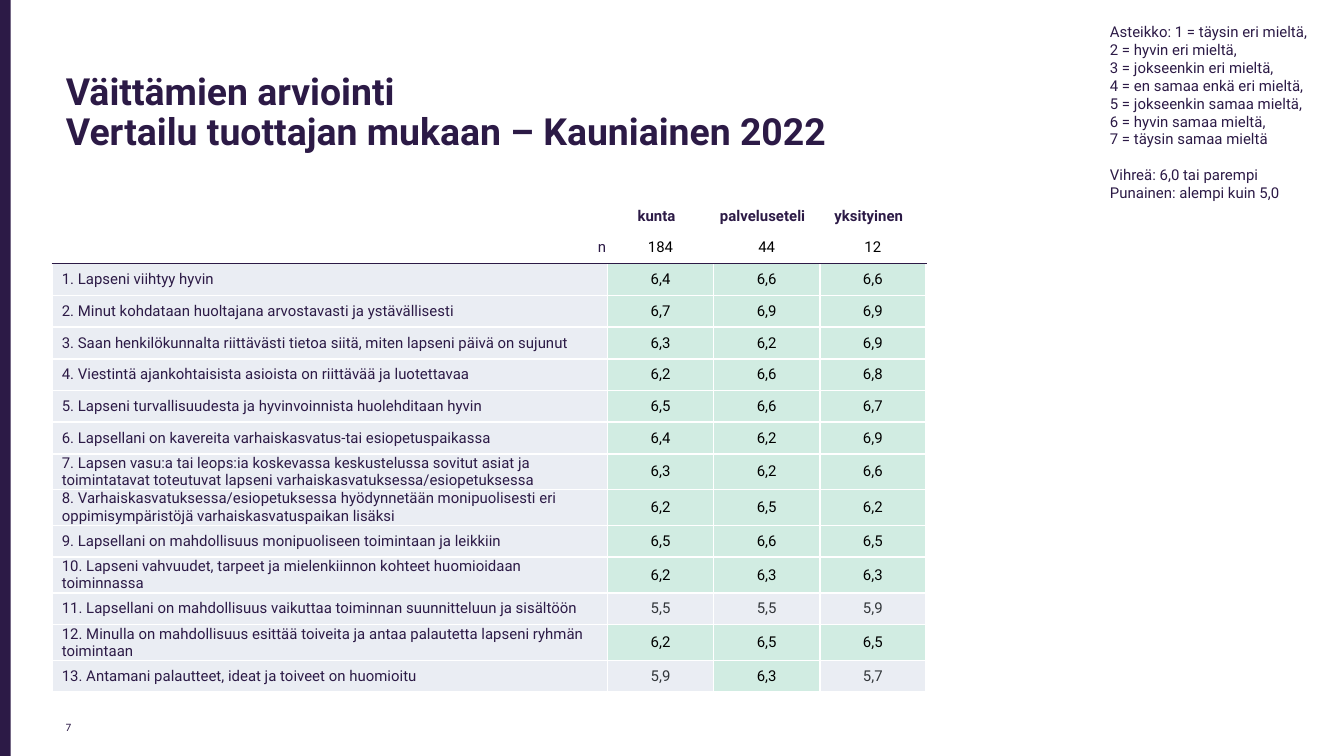
"""Build a slide comparing survey statements by provider."""
from pptx import Presentation
from pptx.dml.color import RGBColor
from pptx.enum import shapes, text
from pptx.oxml import parse_xml
from pptx.oxml import ns
from pptx.util import Inches, Pt

PLUM = RGBColor(0x2C, 0x1A, 0x46)
BLACK = RGBColor(0, 0, 0)
GREY = RGBColor(0x32, 0x36, 0x3A)
PALE = RGBColor(0xEA, 0xED, 0xF3)
GREEN = RGBColor(0xD1, 0xEC, 0xE2)
WHITE = RGBColor(255, 255, 255)
LEFT, CENTER, RIGHT = text.PP_ALIGN.LEFT, text.PP_ALIGN.CENTER, text.PP_ALIGN.RIGHT

TITLE = "Väittämien arviointi \vVertailu tuottajan mukaan – Kauniainen 2022"
SCALE = [
    "Asteikko: 1 = täysin eri mieltä,",
    "2 = hyvin eri mieltä,",
    "3 = jokseenkin eri mieltä,",
    "4 = en samaa enkä eri mieltä,",
    "5 = jokseenkin samaa mieltä,",
    "6 = hyvin samaa mieltä,",
    "7 = täysin samaa mieltä",
]
KEY = ["Vihreä: 6,0 tai parempi", "Punainen: alempi kuin 5,0"]
HEADS = ["", "kunta", "palveluseteli", "yksityinen"]
COUNTS = ["n", "184", "44", "12"]
ITEMS = [
    ("Lapseni viihtyy hyvin", "6,4 6,6 6,6"),
    ("Minut kohdataan huoltajana arvostavasti ja ystävällisesti", "6,7 6,9 6,9"),
    ("Saan henkilökunnalta riittävästi tietoa siitä, miten lapseni päivä on sujunut", "6,3 6,2 6,9"),
    ("Viestintä ajankohtaisista asioista on riittävää ja luotettavaa", "6,2 6,6 6,8"),
    ("Lapseni turvallisuudesta ja hyvinvoinnista huolehditaan hyvin", "6,5 6,6 6,7"),
    ("Lapsellani on kavereita varhaiskasvatus-tai esiopetuspaikassa", "6,4 6,2 6,9"),
    ("Lapsen vasu:a tai leops:ia koskevassa keskustelussa sovitut asiat ja toimintatavat "
     "toteutuvat lapseni varhaiskasvatuksessa/esiopetuksessa", "6,3 6,2 6,6"),
    ("Varhaiskasvatuksessa/esiopetuksessa hyödynnetään monipuolisesti eri "
     "oppimisympäristöjä varhaiskasvatuspaikan lisäksi", "6,2 6,5 6,2"),
    ("Lapsellani on mahdollisuus monipuoliseen toimintaan ja leikkiin", "6,5 6,6 6,5"),
    ("Lapseni vahvuudet, tarpeet ja mielenkiinnon kohteet huomioidaan toiminnassa", "6,2 6,3 6,3"),
    ("Lapsellani on mahdollisuus vaikuttaa toiminnan suunnitteluun ja sisältöön", "5,5 5,5 5,9"),
    ("Minulla on mahdollisuus esittää toiveita ja antaa palautetta lapseni ryhmän toimintaan",
     "6,2 6,5 6,5"),
    ("Antamani palautteet, ideat ja toiveet on huomioitu", "5,9 6,3 5,7"),
]


class Deck:
    """Hold the style and the current slide."""

    def __init__(self, wide, high):
        self.prs = Presentation()
        self.prs.slide_width, self.prs.slide_height = Inches(wide), Inches(high)
        self.slide = self.prs.slides.add_slide(self.prs.slide_layouts[5])
        self.face, self.size = "Roboto", 8

    def style(self, para, color=PLUM, size=None, bold=False, face=None):
        font = para.font
        font.name, font.size = face or self.face, Pt(size or self.size)
        font.bold, font.color.rgb = bold, color

    def title(self, words, *box):
        shape = self.slide.shapes.title
        shape.left, shape.top, shape.width, shape.height = map(Inches, box)
        frame = shape.text_frame
        frame.text, frame.vertical_anchor = words, text.MSO_ANCHOR.MIDDLE
        para = frame.paragraphs[0]
        para.alignment, para.line_spacing = LEFT, 0.9
        self.style(para, size=20, bold=True)

    def bar(self, color, *box):
        kind = shapes.MSO_SHAPE.RECTANGLE
        shape = self.slide.shapes.add_shape(kind, *map(Inches, box))
        shape.shadow.inherit = False
        shape.fill.solid()
        shape.fill.fore_color.rgb = color
        shape.line.fill.background()

    def label(self, lines, *box, anchor=text.MSO_ANCHOR.TOP, **font):
        frame = self.slide.shapes.add_textbox(*map(Inches, box)).text_frame
        frame.word_wrap, frame.vertical_anchor = True, anchor
        frame.text = "\n".join(lines)
        for para in frame.paragraphs:
            self.style(para, **font)
        return frame

    def edges(self, cell, top, bottom):
        props = cell._tc.get_or_add_tcPr()
        for spot, side in enumerate("LRTB"):
            color = {"T": top, "B": bottom}.get(side, WHITE)
            width = Pt(1) if color == WHITE else Pt(0.5)
            props.insert(spot, parse_xml(
                f'<a:ln{side} {ns.nsdecls("a")} w="{width}"><a:solidFill>'
                f'<a:srgbClr val="{color}"/></a:solidFill></a:ln{side}>'))

    def cell(self, cell, words, align, color, fill, pads, bold):
        cell.margin_left, cell.margin_right = map(Inches, pads)
        cell.margin_top = cell.margin_bottom = 0
        cell.vertical_anchor = text.MSO_ANCHOR.MIDDLE
        cell.text = words
        para = cell.text_frame.paragraphs[0]
        para.alignment = align
        self.style(para, color, bold=bold)
        if not words:
            para._p.append(parse_xml(
                f'<a:endParaRPr {ns.nsdecls("a")} sz="{self.size * 100}"/>'))
        if fill is None:
            cell.fill.background()
        else:
            cell.fill.solid()
            cell.fill.fore_color.rgb = fill

    def table(self, rows, widths, left, top, high):
        box = map(Inches, (left, top, sum(widths), high * len(rows)))
        grid = self.slide.shapes.add_table(len(rows), len(widths), *box).table
        grid.first_row = grid.horz_banding = False
        for col, width in zip(grid.columns, widths):
            col.width = Inches(width)
        for r, row in enumerate(rows):
            grid.rows[r].height = Inches(high)
            for c, words in enumerate(row):
                good = r > 1 and c and float(words.replace(",", ".")) >= 6
                fill = None if r < 2 else GREEN if good else PALE
                color = PLUM if r == 0 or c == 0 else BLACK if good or r == 1 else GREY
                align = CENTER if c else RIGHT if r == 1 else LEFT
                pads = (0.01 if c else 0.07, 0.07 if c and r == 0 else 0.01)
                cell = grid.cell(r, c)
                self.cell(cell, words, align, color, fill, pads, r == 0)
                self.edges(cell, PLUM if r == 2 else WHITE, PLUM if r == 1 else WHITE)


def main():
    wide = 10
    high = wide * 9 / 16
    deck = Deck(wide, high)
    deck.bar(PLUM, 0, 0, 0.08, high)
    deck.label(["7"], 0.39, 5.21, 0.41, 0.3, anchor=text.MSO_ANCHOR.BOTTOM,
               size=6, face="Calibri")
    deck.title(TITLE, 0.39, 0.3, 8.84, 1.09)
    rows = [HEADS, COUNTS]
    rows += [[f"{n}. {words}", *marks.split()] for n, (words, marks) in enumerate(ITEMS, 1)]
    deck.table(rows, [4.13, 0.79, 0.79, 0.79], 0.39, 1.49, 17 / 72)
    legend = deck.label(SCALE + KEY, 8.16, 0.12, 1.71, 1.58)
    legend.paragraphs[len(SCALE)].space_before = Pt(9.6)
    deck.prs.save("out.pptx")


if __name__ == "__main__":
    main()
